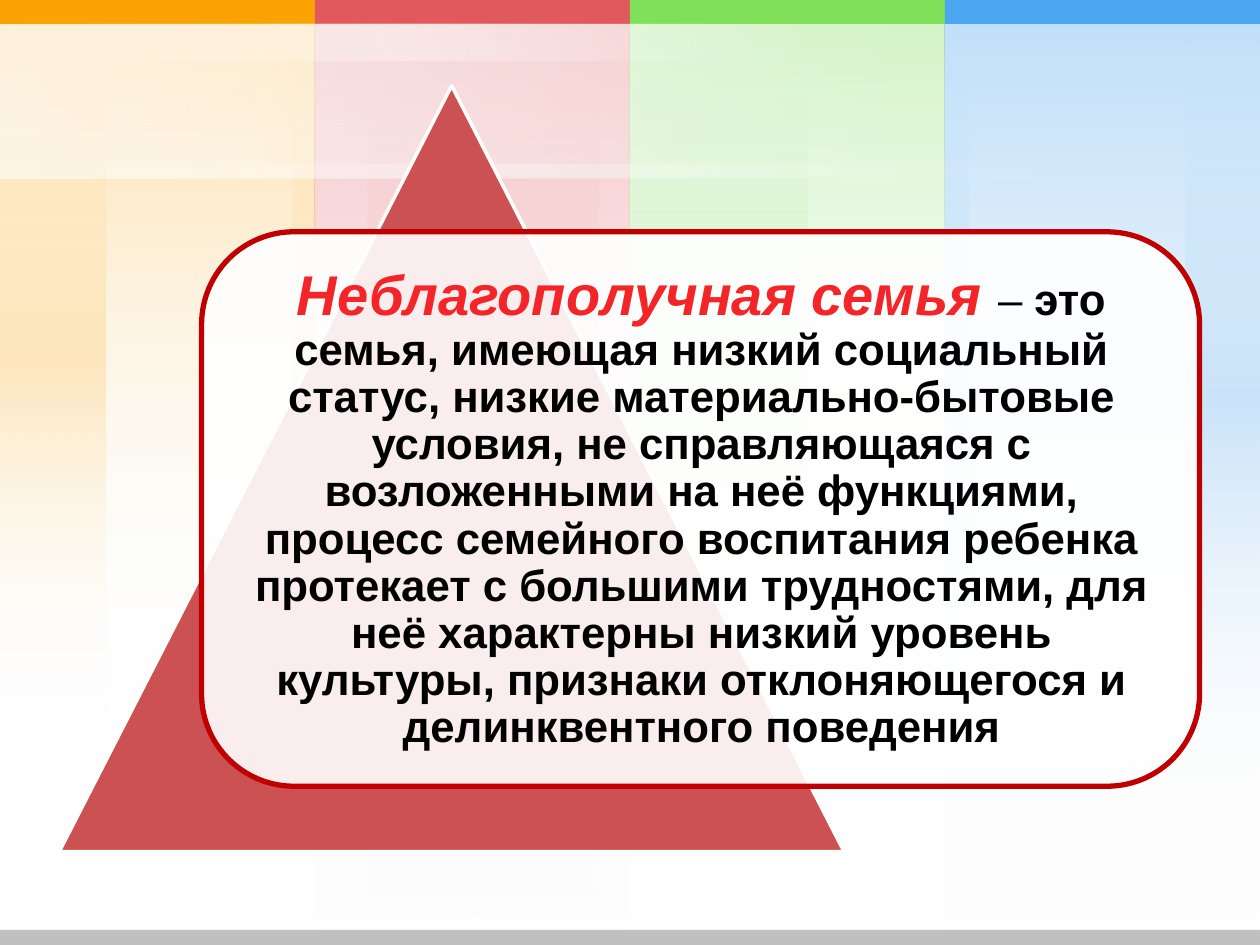
from dataclasses import dataclass

from lxml.etree import SubElement
from pptx import Presentation
from pptx.dml.color import RGBColor
from pptx.enum.shapes import MSO_SHAPE
from pptx.enum.text import MSO_ANCHOR, PP_ALIGN
from pptx.oxml import parse_xml
from pptx.oxml.ns import nsdecls, qn
from pptx.util import Emu, Pt

PX = 9144  # 100 px to the inch
COLUMN_WIDTH = 250
WHITE = "FFFFFF"
Box = tuple[int, int, int, int]


@dataclass(frozen=True)
class Column:
    """A coloured column; glows are (offset, width) strips inside it."""
    color: str
    height: int
    glow_height: int
    glows: list[tuple[int, int]]


@dataclass(frozen=True)
class Sheen:
    """A white band, turned so that it runs from left to right."""
    box: Box
    alphas: list[int]


@dataclass(frozen=True)
class Phrase:
    text: str
    size: int
    color: str
    bold: bool = False
    italic: bool = False


COLUMNS = [
    Column("FCA304", 562, 562, [(232, 18), (0, 84)]),
    Column("E1595C", 750, 750, [(42, 183)]),
    Column("80E05A", 562, 562, [(0, 141)]),
    Column("4BA5EF", 747, 637, [(0, 19), (191, 59)]),
]
WIDE_SHEEN = Sheen((315, -295, 122, 751), [35, 0])
SHEENS = [
    Sheen((416, -285, 10, 842), [0, 35, 0]),
    WIDE_SHEEN,
    Sheen((306, -287, 29, 641), [0, 35, 0]),
    WIDE_SHEEN,
]
DEFINITION = [
    Phrase("Неблагополучная семья ", 32, "F32528", bold=True, italic=True),
    Phrase("– ", 25, "000000"),
    Phrase(
        "это семья, имеющая низкий социальный статус, низкие "
        "материально-бытовые условия, не справляющаяся с возложенными на неё "
        "функциями, процесс семейного воспитания ребенка протекает с большими "
        "трудностями, для неё характерны низкий уровень культуры, признаки "
        "отклоняющегося и делинквентного поведения",
        25, "000000", bold=True),
]


def px(length: int) -> Emu:
    return Emu(length * PX)


def rgb(color: str) -> RGBColor:
    return RGBColor.from_string(color)


def add_block(slide, box: Box, color: str, kind=MSO_SHAPE.RECTANGLE):
    block = slide.shapes.add_shape(kind, *map(px, box))
    block.shadow.inherit = False
    block.fill.solid()
    block.fill.fore_color.rgb = rgb(color)
    block.line.fill.background()
    return block


def set_outline(block, color: str, width: int) -> None:
    block.line.color.rgb = rgb(color)
    block.line.width = Pt(width)


def set_alpha(block, percent: int) -> None:
    color = block._element.spPr.find(qn("a:solidFill"))[0]
    SubElement(color, qn("a:alpha"), val=str(percent * 1000))


def add_fade(slide, box: Box, stops: list[tuple[str, int]]):
    """Rectangle with evenly spaced (colour, opacity) stops, top to bottom."""
    block = add_block(slide, box, WHITE)
    step = 100000 // (len(stops) - 1)
    marks = "".join(
        f'<a:gs pos="{i * step}"><a:srgbClr val="{color}">'
        f'<a:alpha val="{alpha * 1000}"/></a:srgbClr></a:gs>'
        for i, (color, alpha) in enumerate(stops))
    gradient = parse_xml(
        f'<a:gradFill {nsdecls("a")} rotWithShape="1"><a:gsLst>{marks}</a:gsLst>'
        '<a:lin ang="5400000" scaled="0"/></a:gradFill>')
    properties = block._element.spPr
    properties.replace(properties.find(qn("a:solidFill")), gradient)
    return block


def add_column(slide, left: int, column: Column) -> None:
    clear = (WHITE, 0)
    tint = (column.color, 20)
    base = (left, 0, COLUMN_WIDTH, column.height)
    add_fade(slide, base, [tint, clear])
    for offset, width in column.glows:
        add_fade(slide, (left + offset, 0, width, column.glow_height),
                 [clear, tint, clear])
    add_fade(slide, base, [tint, clear])


def add_definition(slide, box: Box, phrases: list[Phrase]) -> None:
    frame = slide.shapes.add_textbox(*map(px, box)).text_frame
    frame.word_wrap = True
    frame.vertical_anchor = MSO_ANCHOR.MIDDLE
    frame.margin_left = frame.margin_right = px(13)
    frame.margin_top = frame.margin_bottom = px(13)
    paragraph = frame.paragraphs[0]
    paragraph.alignment = PP_ALIGN.CENTER
    paragraph.line_spacing = 0.9
    for phrase in phrases:
        run = paragraph.add_run()
        run.text = phrase.text
        run.font.name = "Arial"
        run.font.size = Pt(phrase.size)
        run.font.bold = phrase.bold
        run.font.italic = phrase.italic
        run.font.color.rgb = rgb(phrase.color)


def main() -> None:
    presentation = Presentation()
    presentation.slide_width, presentation.slide_height = px(1000), px(750)
    slide = presentation.slides.add_slide(presentation.slide_layouts[6])

    # Fading columns, then their solid caps
    for i, column in enumerate(COLUMNS):
        add_column(slide, i * COLUMN_WIDTH, column)
    for i, column in enumerate(COLUMNS):
        add_block(slide, (i * COLUMN_WIDTH, 0, COLUMN_WIDTH, 19), column.color)

    # White sheen behind the heading area, and the footer bar
    for sheen in SHEENS:
        band = add_fade(slide, sheen.box, [(WHITE, a) for a in sheen.alphas])
        band.rotation = 270
    add_block(slide, (0, 738, 1000, 12), "C0C0C0")

    # Triangle with the definition card over it
    triangle = add_block(slide, (47, 68, 623, 608), "CC5153",
                         MSO_SHAPE.ISOSCELES_TRIANGLE)
    set_outline(triangle, WHITE, 2)
    card = add_block(slide, (160, 184, 792, 440), WHITE,
                     MSO_SHAPE.ROUNDED_RECTANGLE)
    set_alpha(card, 90)
    set_outline(card, "C00000", 3)
    add_definition(slide, (182, 206, 749, 397), DEFINITION)

    presentation.save("out.pptx")


if __name__ == "__main__":
    main()
